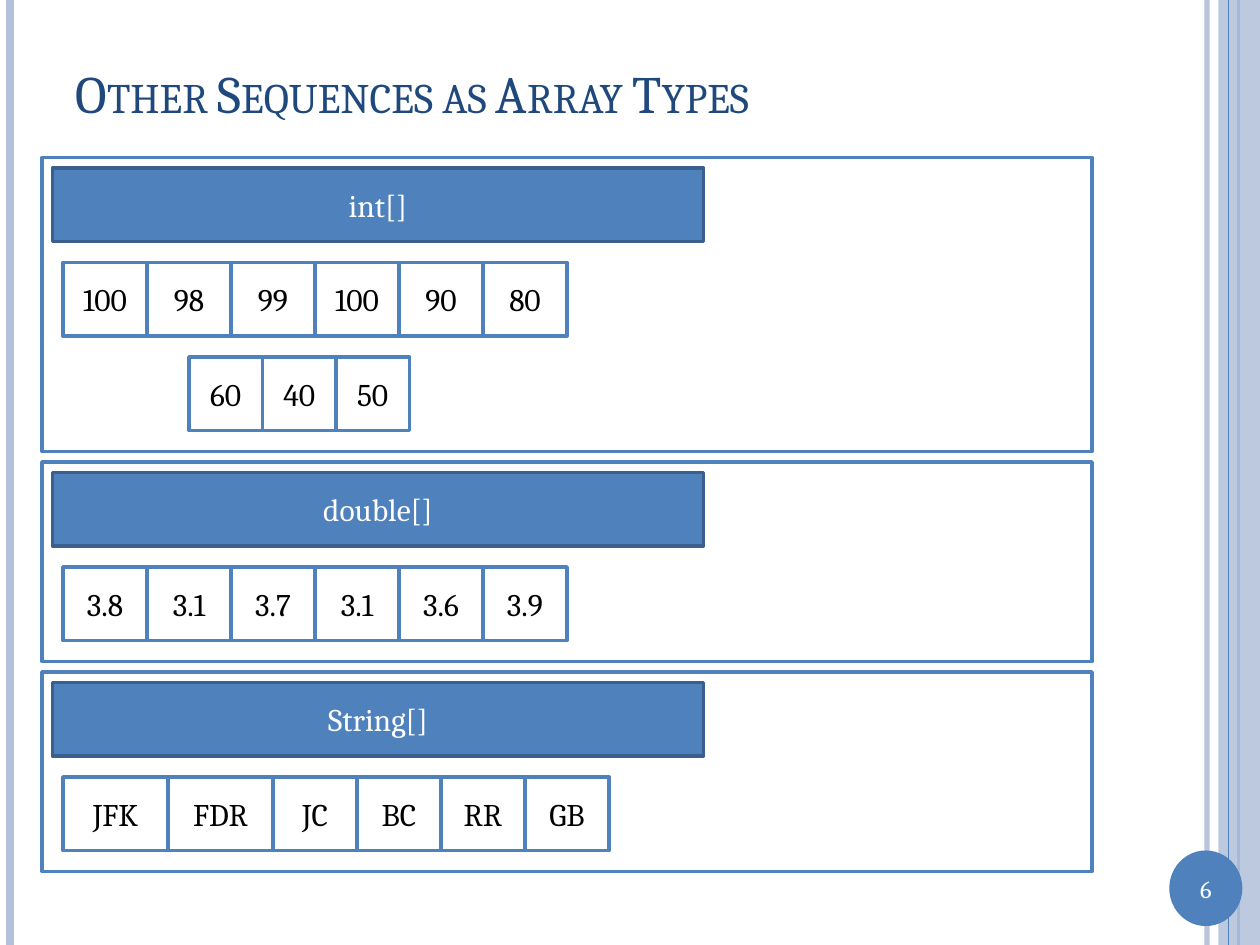
from dataclasses import dataclass

from lxml import etree
from pptx import Presentation
from pptx import util as u
from pptx.dml import color
from pptx.enum import shapes, text
from pptx.oxml import ns


@dataclass(frozen=True)
class Theme:
    font: str = "Cambria"
    accent: str = "4F81BD"
    accent_dark: str = "3A5F8C"
    pale: str = "B3C1DB"
    heading: str = "1F497D"
    white: str = "FFFFFF"
    black: str = "000000"
    title_size: int = 30
    body_size: int = 18
    number_size: int = 14
    outline: float = 2


THEME = Theme()
GRID = u.Inches(1) / 12
ROW_HEIGHT = 7

ARRAYS = [
    ("int[]", 15, 28, [
        (2, 10, [("100", 8), ("98", 8), ("99", 8), ("100", 8), ("90", 8), ("80", 8)]),
        (14, 19, [("60", 7), ("40", 7), ("50", 7)]),
    ]),
    ("double[]", 44, 19, [
        (2, 10, [(value, 8) for value in ("3.8", "3.1", "3.7", "3.1", "3.6", "3.9")]),
    ]),
    ("String[]", 64, 19, [
        (2, 10, [("JFK", 10), ("FDR", 10), ("JC", 8), ("BC", 8), ("RR", 8), ("GB", 8)]),
    ]),
]


def rgb(value):
    return color.RGBColor.from_string(value)


def set_alpha(fill, percent):
    solid = fill._xPr.find(ns.qn("a:solidFill"))
    etree.SubElement(solid[0], ns.qn("a:alpha"), val=str(percent * 1000))


def write(shape, words, size, ink, align=text.PP_ALIGN.CENTER):
    frame = shape.text_frame
    frame.text = words
    frame.word_wrap = True
    frame.vertical_anchor = text.MSO_ANCHOR.MIDDLE
    paragraph = frame.paragraphs[0]
    paragraph.alignment = align
    font = paragraph.runs[0].font
    font.name, font.size = THEME.font, u.Pt(size)
    font.color.rgb = rgb(ink)
    return font


def add_block(slide, kind, box, fill, line=None):
    shape = slide.shapes.add_shape(kind, *(round(length) for length in box))
    shape.shadow.inherit = False
    shape.fill.solid()
    shape.fill.fore_color.rgb = rgb(fill)
    if line:
        shape.line.color.rgb = rgb(line)
        shape.line.width = u.Pt(THEME.outline)
    else:
        shape.line.fill.background()
    return shape


def add_grid_box(slide, left, top, width, height, fill, line):
    box = [length * GRID for length in (left, top, width, height)]
    return add_block(slide, shapes.MSO_SHAPE.RECTANGLE, box, fill, line)


def add_stripe(slide, x, height, ink, width, alpha=None):
    stripe = slide.shapes.add_connector(
        shapes.MSO_CONNECTOR.STRAIGHT, u.Inches(x), 0, u.Inches(x), height)
    stripe.line.color.rgb = rgb(ink)
    stripe.line.width = u.Pt(width)
    if alpha:
        set_alpha(stripe.line.fill, alpha)
    etree.SubElement(stripe._element.spPr, ns.qn("a:effectLst"))


def add_side_bands(slide, height):
    add_stripe(slide, 9.58, height, THEME.pale, 3, 93)
    add_stripe(slide, 0.08, height, THEME.pale, 4.5)
    add_stripe(slide, 9.83, height, THEME.accent, 1.5)
    band = add_block(slide, shapes.MSO_SHAPE.RECTANGLE,
                     (u.Inches(9.67), 0, u.Inches(0.33), height), THEME.pale)
    set_alpha(band.fill, 87)
    add_stripe(slide, 9.75, height, THEME.accent, 0.75)


def add_page_number(slide, left, top, width, height, number):
    add_block(slide, shapes.MSO_SHAPE.OVAL, (left, top, width, height), THEME.accent)
    label = slide.shapes.add_textbox(left, top + u.Inches(0.13), width, u.Inches(0.34))
    write(label, number, THEME.number_size, THEME.white)


def place_title(slide, left, top, width, height, words):
    title = slide.shapes.title
    title.left, title.top, title.width, title.height = left, top, width, height
    font = write(title, words, THEME.title_size, THEME.heading, text.PP_ALIGN.LEFT)
    font._element.set("cap", "small")


def add_array_panel(slide, left, top, width, height, name, rows):
    add_grid_box(slide, left, top, width, height, THEME.white, THEME.accent)
    for row_left, row_top, cells in rows:
        x = left + row_left
        for value, cell_width in cells:
            cell = add_grid_box(slide, x, top + row_top, cell_width, ROW_HEIGHT,
                                THEME.white, THEME.accent)
            write(cell, value, THEME.body_size, THEME.black)
            x += cell_width
    header = add_grid_box(slide, left + 1, top + 1, 62, ROW_HEIGHT,
                          THEME.accent, THEME.accent_dark)
    write(header, name, THEME.body_size, THEME.white)


def main():
    presentation = Presentation()
    presentation.slide_width = u.Inches(10)
    presentation.slide_height = u.Inches(7.5)
    slide = presentation.slides.add_slide(
        presentation.slide_layouts.get_by_name("Title Only"))
    add_side_bands(slide, presentation.slide_height)
    add_page_number(slide, u.Inches(9.28), u.Inches(6.75),
                    u.Inches(0.58), u.Inches(0.6), "6")
    place_title(slide, u.Inches(0.5), u.Inches(0.3), u.Inches(8.67), u.Inches(0.87),
                "Other Sequences as Array Types")
    for name, top, height, rows in ARRAYS:
        add_array_panel(slide, 4, top, 100, height, name, rows)
    presentation.save("out.pptx")


if __name__ == "__main__":
    main()
